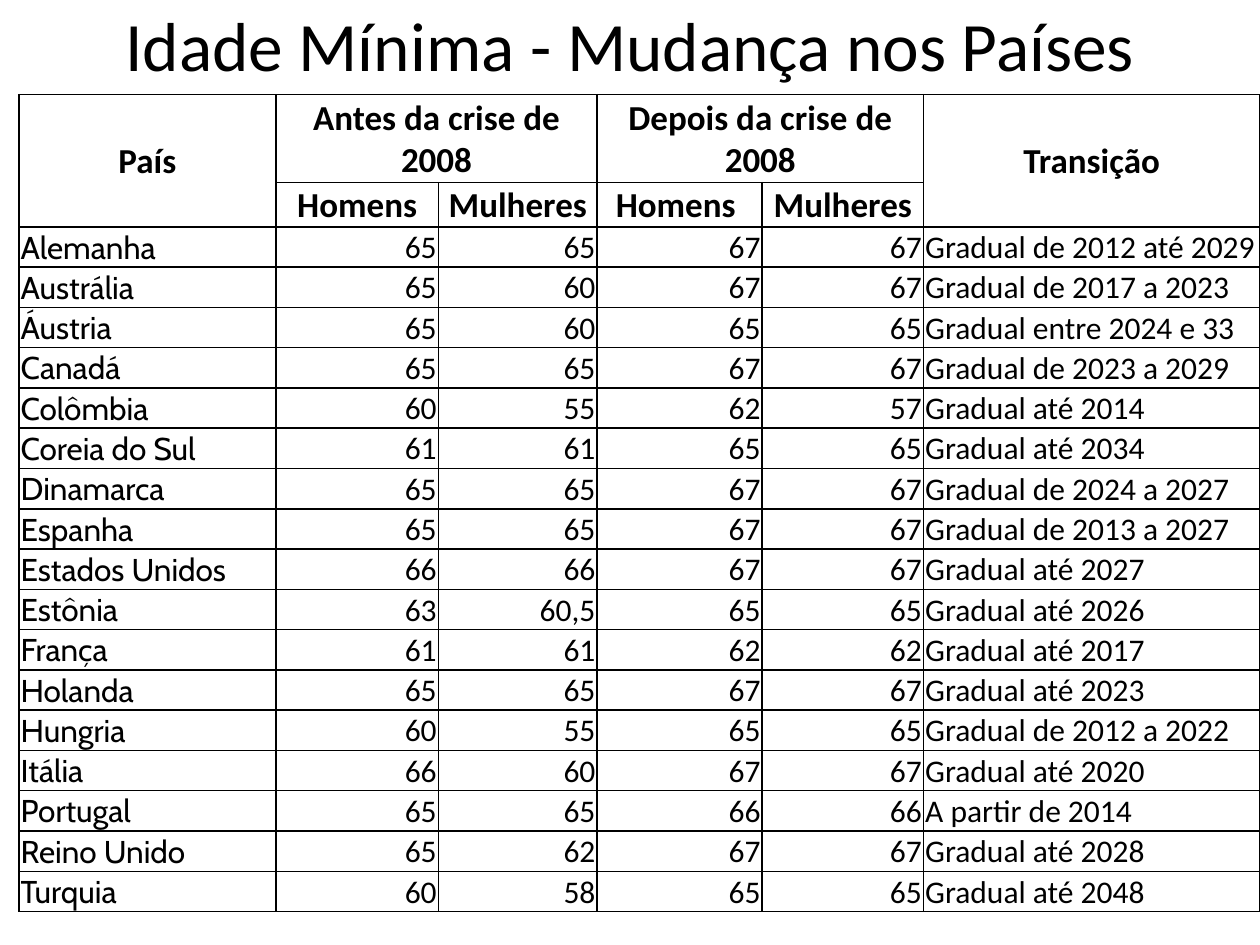
"""Build a slide comparing minimum retirement ages before and after the 2008 crisis."""
import pptx
import pptx.dml.color
import pptx.enum.text
import pptx.oxml
import pptx.oxml.ns
import pptx.util

Inches = pptx.util.Inches
ALIGN = pptx.enum.text.PP_ALIGN
MIDDLE = pptx.enum.text.MSO_ANCHOR.MIDDLE
BLACK = pptx.dml.color.RGBColor(0x00, 0x00, 0x00)
WHITE = pptx.dml.color.RGBColor(0xFF, 0xFF, 0xFF)

TITLE = "Idade Mínima - Mudança nos Países"
HEADERS = [
    (0, 0, 2, 1, "País"),
    (0, 1, 1, 2, "Antes da crise de 2008"),
    (0, 3, 1, 2, "Depois da crise de 2008"),
    (0, 5, 2, 1, "Transição"),
    (1, 1, 1, 1, "Homens"),
    (1, 2, 1, 1, "Mulheres"),
    (1, 3, 1, 1, "Homens "),
    (1, 4, 1, 1, "Mulheres"),
]
COUNTRIES = [
    ("Alemanha", "65", "65", "67", "67", "Gradual de 2012 até 2029"),
    ("Austrália", "65", "60", "67", "67", "Gradual de 2017 a 2023"),
    ("Áustria", "65", "60", "65", "65", "Gradual entre 2024 e 33"),
    ("Canadá", "65", "65", "67", "67", "Gradual de 2023 a 2029"),
    ("Colômbia", "60", "55", "62", "57", "Gradual até 2014"),
    ("Coreia do Sul", "61", "61", "65", "65", "Gradual até 2034"),
    ("Dinamarca", "65", "65", "67", "67", "Gradual de 2024 a 2027"),
    ("Espanha", "65", "65", "67", "67", "Gradual de 2013 a 2027"),
    ("Estados Unidos", "66", "66", "67", "67", "Gradual até 2027"),
    ("Estônia", "63", "60,5", "65", "65", "Gradual até 2026"),
    ("França", "61", "61", "62", "62", "Gradual até 2017"),
    ("Holanda", "65", "65", "67", "67", "Gradual até 2023"),
    ("Hungria", "60", "55", "65", "65", "Gradual de 2012 a 2022"),
    ("Itália", "66", "60", "67", "67", "Gradual até 2020"),
    ("Portugal", "65", "65", "66", "66", "A partir de 2014"),
    ("Reino Unido", "65", "62", "67", "67", "Gradual até 2028"),
    ("Turquia", "60", "58", "65", "65", "Gradual até 2048"),
]
COLUMN_WIDTHS = [2.04, 1.29, 1.26, 1.31, 1.28, 2.67]
COLUMN_FORMATS = [("Cabin", ALIGN.LEFT)] + [("Calibri", ALIGN.RIGHT)] * 4 + [("Calibri", ALIGN.LEFT)]
ROW_HEIGHTS = [0.7, 0.35] + [0.32] * len(COUNTRIES)


def write(frame, text, font="Calibri", size=18, bold=False, align=ALIGN.LEFT):
    para = frame.paragraphs[0]
    para.alignment = align
    span = para.add_run()
    span.text = text
    span.font.name = font
    span.font.size = pptx.util.Pt(size)
    span.font.bold = bold
    span.font.color.rgb = BLACK


def style_cell(cell):
    cell.vertical_anchor = MIDDLE
    cell.margin_left = cell.margin_top = cell.margin_right = pptx.util.Pt(1)
    cell.margin_bottom = 0
    properties = cell._tc.get_or_add_tcPr()
    for side in ("lnL", "lnR", "lnT", "lnB"):
        properties.append(pptx.oxml.parse_xml(
            f'<a:{side} {pptx.oxml.ns.nsdecls("a")} w="{pptx.util.Pt(1)}">'
            f'<a:solidFill><a:srgbClr val="{BLACK}"/></a:solidFill></a:{side}>'))
    cell.fill.solid()
    cell.fill.fore_color.rgb = WHITE


def add_title(page):
    box = page.shapes.add_textbox(Inches(0.5), 0, Inches(9), Inches(0.69))
    box.text_frame.word_wrap = True
    box.text_frame.vertical_anchor = MIDDLE
    write(box.text_frame, TITLE, size=39.6, align=ALIGN.CENTER)


def add_age_table(page):
    holder = page.shapes.add_table(len(ROW_HEIGHTS), len(COLUMN_WIDTHS), Inches(0.15), Inches(0.75),
                                   Inches(sum(COLUMN_WIDTHS)), Inches(sum(ROW_HEIGHTS)))
    table = holder.table
    table.first_row = table.horz_banding = False
    for column, width in zip(table.columns, COLUMN_WIDTHS):
        column.width = Inches(width)
    for row, height in zip(table.rows, ROW_HEIGHTS):
        row.height = Inches(height)
    for cell in table.iter_cells():
        style_cell(cell)
    for top, left, tall, wide, label in HEADERS:
        cell = table.cell(top, left)
        if tall * wide > 1:
            cell.merge(table.cell(top + tall - 1, left + wide - 1))
        write(cell.text_frame, label, size=20, bold=True, align=ALIGN.CENTER)
    for row, country in enumerate(COUNTRIES, start=2):
        for column, (value, (font, align)) in enumerate(zip(country, COLUMN_FORMATS)):
            write(table.cell(row, column).text_frame, value, font=font, align=align)


def main():
    deck = pptx.Presentation()
    deck.slide_width, deck.slide_height = Inches(10), Inches(7.5)
    page = deck.slides.add_slide(deck.slide_layouts[6])
    add_title(page)
    add_age_table(page)
    deck.save("out.pptx")


if __name__ == "__main__":
    main()
